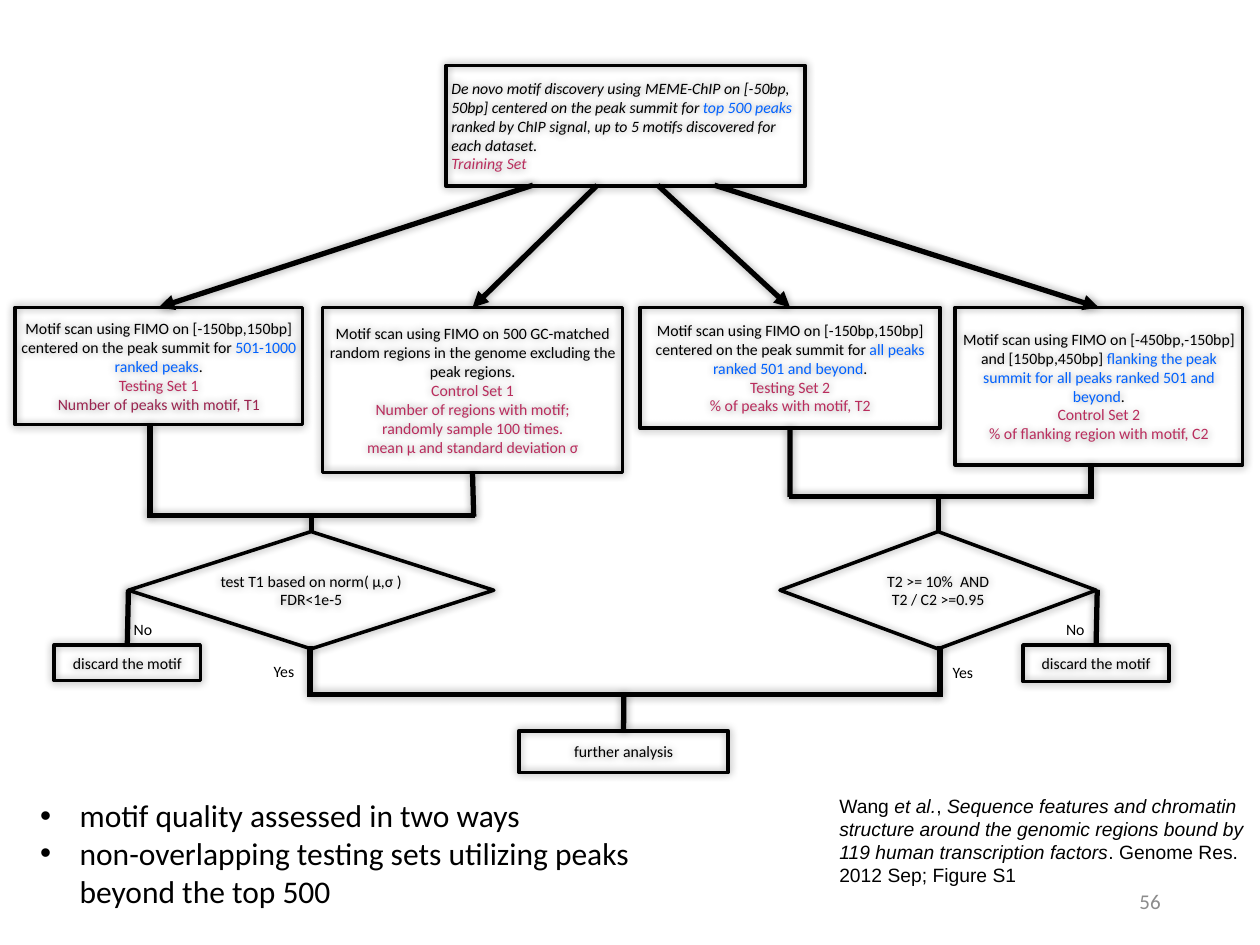
from lxml import etree
from pptx import Presentation
from pptx.dml.color import RGBColor
from pptx.enum.shapes import MSO_CONNECTOR as Link, MSO_SHAPE as Shape
from pptx.enum.text import MSO_ANCHOR as Anchor, MSO_AUTO_SIZE as Fit, PP_ALIGN as Align
from pptx.oxml.ns import qn
from pptx.util import Pt

HUES = {"ink": "000000", "blue": "0061FF", "rose": "B92D5D", "wine": "9A244F", "grey": "8C8C8C"}
TOP, LEFT, BOTTOM, RIGHT = range(4)


def color(name):
    return RGBColor.from_string(HUES[name])


def assign(item, values):
    for name, value in values.items():
        setattr(item, name, value)


class Chart:
    """Flow chart style and the slide it is drawn on."""
    frame = dict.fromkeys(
        ("margin_left", "margin_right", "margin_top", "margin_bottom"), Pt(3))
    frame.update(word_wrap=True, vertical_anchor=Anchor.MIDDLE)
    face = {"name": "Calibri", "size": Pt(9), "italic": False, "bold": False}

    def __init__(self, slide):
        self.slide = slide
        self.shapes = slide.shapes

    def fill_text(self, frame, paras, align=Align.LEFT, **style):
        """Each paragraph is a string or a list of (text, hue, format) runs."""
        for i, runs in enumerate(paras):
            para = frame.paragraphs[0] if i == 0 else frame.add_paragraph()
            para.alignment = align
            para.space_before = Pt(0)
            for text, hue, *extra in [(runs, "ink")] if isinstance(runs, str) else runs:
                run = para.add_run()
                run.text = text
                assign(run.font, self.face | style | (extra[0] if extra else {}))
                run.font.color.rgb = color(hue)

    def shade(self, item):
        """Soft black glow around a shape or connector."""
        props = item._element.spPr
        effects = props.find(qn("a:effectLst"))
        if effects is None:
            effects = etree.SubElement(props, qn("a:effectLst"))
        glow = etree.SubElement(effects, qn("a:outerShdw"), blurRad=str(Pt(5)),
                                dist="0", dir="0", rotWithShape="0")
        black = etree.SubElement(glow, qn("a:srgbClr"), val=HUES["ink"])
        etree.SubElement(black, qn("a:alpha"), val="40000")

    def finish(self, shape, paras, align):
        shape.shadow.inherit = False
        shape.fill.background()
        shape.line.width = Pt(2)
        shape.line.color.rgb = color("ink")
        self.shade(shape)
        assign(shape.text_frame, self.frame)
        italic = align == Align.LEFT
        self.fill_text(shape.text_frame, paras, align, italic=italic)
        return shape

    def box(self, spot, *paras, align=Align.CENTER):
        shape = self.shapes.add_shape(Shape.RECTANGLE, *map(Pt, spot))
        return self.finish(shape, paras, align)

    def diamond(self, x, y, w, h, *paras):
        """Outline whose text may use the full width."""
        path = self.shapes.build_freeform(Pt(x), Pt(y + h / 2))
        corners = [(x + w / 2, y + h), (x + w, y + h / 2), (x + w / 2, y)]
        path.add_line_segments([(Pt(a), Pt(b)) for a, b in corners])
        return self.finish(path.convert_to_shape(), paras, Align.CENTER)

    def line(self, start, end, goal=None, side=TOP, arrow=False):
        link = self.shapes.add_connector(Link.STRAIGHT, *map(Pt, (*start, *end)))
        if goal is not None:
            link.end_connect(goal, side)
        link.line.width = Pt(3)
        link.line.color.rgb = color("ink")
        if arrow:
            stroke = link._element.spPr.find(qn("a:ln"))
            etree.SubElement(stroke, qn("a:tailEnd"), type="triangle")
        self.shade(link)

    def label(self, spot, paras, align=Align.LEFT, frame=None, **style):
        text = self.shapes.add_textbox(*map(Pt, spot)).text_frame
        assign(text, self.frame | (frame or {}))
        self.fill_text(text, paras, align, **style)

    def bullets(self, spot, *paras):
        body = self.slide.placeholders[1]
        assign(body, dict(zip(("left", "top", "width", "height"), map(Pt, spot))))
        text = body.text_frame
        assign(text, {"auto_size": Fit.NONE, "word_wrap": True, "vertical_anchor": Anchor.TOP})
        self.fill_text(text, paras, size=Pt(18))
        for para in text.paragraphs:
            props = para._p.get_or_add_pPr()
            props.set("marL", str(Pt(22.5)))
            props.set("indent", str(-Pt(22.5)))
            etree.SubElement(props, qn("a:buFont"), typeface="Arial")
            etree.SubElement(props, qn("a:buChar"), char="•")


def main():
    deck = Presentation()
    deck.slide_width, deck.slide_height = Pt(720), Pt(540)
    slide = deck.slides.add_slide(deck.slide_layouts[1])
    title = slide.shapes.title._element
    title.getparent().remove(title)
    chart = Chart(slide)
    row = 175.7
    scan = "Motif scan using FIMO on "
    near = scan + "[-150bp,150bp] centered on the peak summit for "
    dot = (".", "ink")

    def rose(text):
        return [(text, "rose")]

    chart.box((254.9, 37.4, 205.2, 69),
              [("De novo motif discovery using MEME-ChIP on [-50bp, 50bp] "
                "centered on the peak summit for ", "ink"),
               ("top 500 peaks", "blue"),
               (" ranked by ChIP signal, up to 5 motifs discovered for each dataset.", "ink")],
              rose("Training Set"), align=Align.LEFT)
    test1 = chart.box((8.6, row, 164.2, 67),
                      [(near, "ink"), ("501-1000 ranked peaks", "blue"), dot],
                      rose("Testing Set 1"), [("Number of peaks with motif, T1", "wine")])
    control1 = chart.box((184.3, row, 171.4, 94.3),
                         scan + "500 GC-matched random regions in the genome "
                         "excluding the peak regions.",
                         *map(rose, ("Control Set 1", "Number of regions with motif;",
                                     "randomly sample 100 times.",
                                     "mean μ and standard deviation σ")))
    test2 = chart.box((365.8, row, 171.4, 69),
                      [(near, "ink"), ("all peaks ranked 501 and beyond", "blue"), dot],
                      rose("Testing Set 2"), rose("% of peaks with motif, T2"))
    control2 = chart.box((545.8, row, 164.2, 90),
                         [(scan + "[-450bp,-150bp] and [150bp,450bp] ", "ink"),
                          ("flanking the peak summit for all peaks ranked 501 and beyond", "blue"),
                          dot],
                         rose("Control Set 2"), rose("% of flanking region with motif, C2"))
    for x, goal in ((304.6, test1), (341.3, control1), (375.8, test2), (408.2, control2)):
        chart.line((x, 105.8), (x, row), goal, arrow=True)

    chart.diamond(73.4, 303.8, 208.8, 67, "test T1 based on norm( μ,σ )", "FDR<1e-5")
    chart.diamond(445.7, 303.8, 180.7, 67, "T2 >= 10%  AND", "T2 / C2 >=0.95")
    drops = (chart.box((31, 368.6, 83.5, 20.4), "discard the motif"),
             chart.box((584.6, 368.6, 83.5, 20.9), "discard the motif"))
    more = chart.box((296.6, 417.6, 119.5, 23.8), "further analysis")

    chart.line((270.7, 295.2), (270.7, 270), control1, BOTTOM)
    chart.line((451.4, 284), (451.4, 244.8), test2, BOTTOM)
    for x, drop in zip((73.4, 627), drops):
        chart.line((x, 337), (x, 368.6), drop)
    chart.line((356.4, 396.7), (356.4, 417.6), more)
    for start, end in (((85.7, 295.2), (85.7, 242.6)), ((84.2, 294.8), (271.4, 294.8)),
                       ((177.8, 295.2), (177.8, 303.8)), ((450.7, 283.7), (623.5, 283.7)),
                       ((536.4, 283.7), (536.4, 303.8)), ((623.5, 285.1), (623.5, 265.7)),
                       ((178.6, 396.7), (536.4, 396.7)), ((177.1, 398.2), (177.1, 369.4)),
                       ((537.1, 398.2), (537.1, 369.4))):
        chart.line(start, end)

    for text, x, y, w in (("Yes", 153.4, 375, 21.6), ("Yes", 541.4, 375.8, 21.6),
                          ("No", 73.4, 351.4, 17.3), ("No", 606.2, 351.4, 17.3)):
        chart.label((x, y, w, 16.6), [text], frame={"word_wrap": False})
    slant = {"italic": True}
    chart.label((476.6, 450, 243.4, 60.5),
                [[("Wang", "ink"), (" et al.", "ink", slant), (", ", "ink"),
                  ("Sequence features and chromatin structure around the genomic regions "
                   "bound by 119 human transcription factors", "ink", slant),
                  (". Genome Res. 2012 Sep; Figure S1", "ink")]],
                name="Arial", size=Pt(11))
    chart.bullets((15.8, 451.4, 360, 72.7), "motif quality assessed in two ways",
                  "non-overlapping testing sets utilizing peaks beyond the top 500")
    chart.label((508.3, 500.4, 162, 28.8), [[("56", "grey")]], Align.RIGHT,
                {"margin_right": Pt(7.2)}, size=Pt(12))
    deck.save("out.pptx")


if __name__ == "__main__":
    main()
